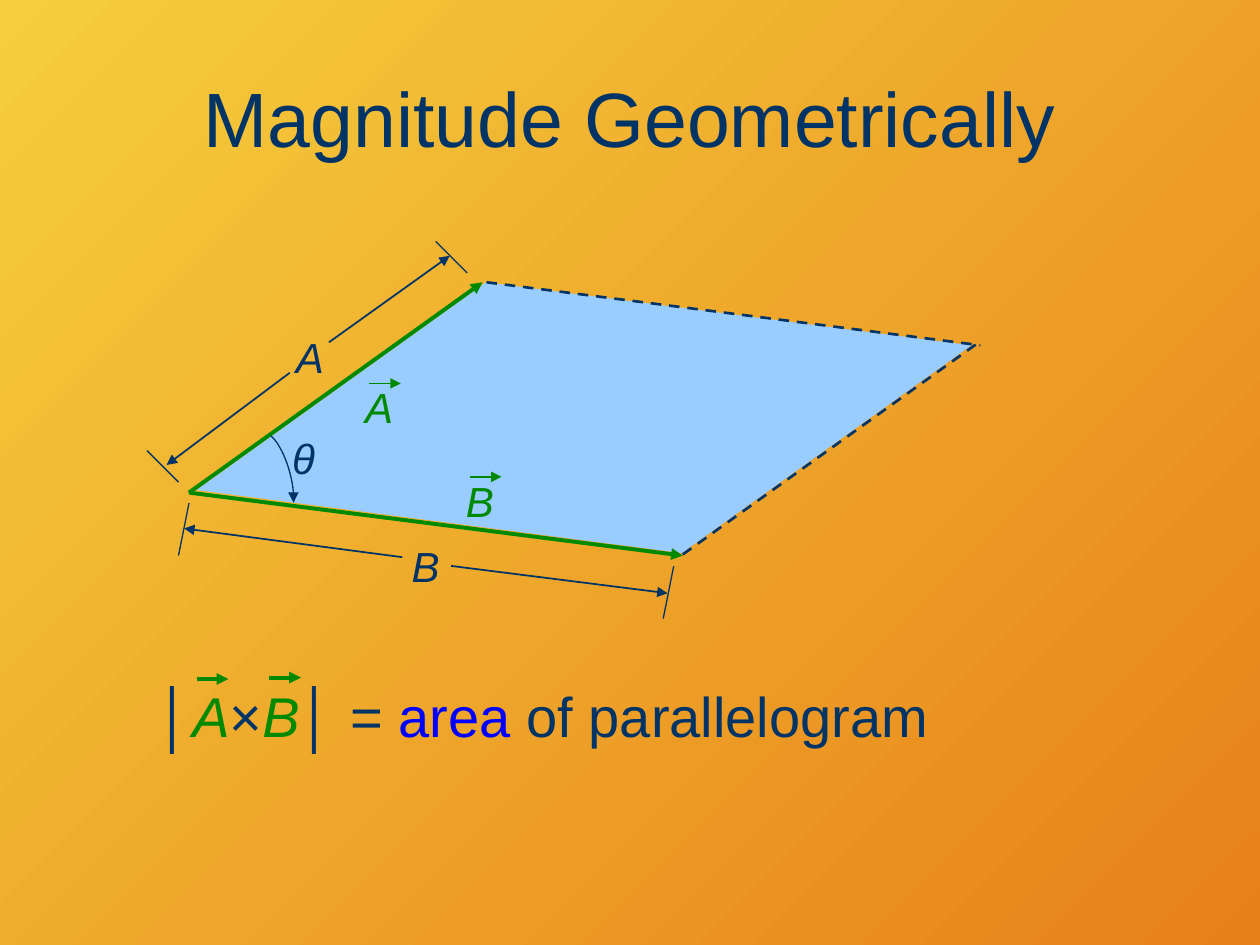
from dataclasses import dataclass

from lxml.etree import SubElement
from pptx import Presentation
from pptx.dml.color import RGBColor
from pptx.enum.dml import MSO_LINE
from pptx.enum.shapes import MSO_CONNECTOR, MSO_SHAPE
from pptx.enum.text import MSO_ANCHOR, PP_ALIGN
from pptx.oxml.ns import qn
from pptx.util import Pt


@dataclass(frozen=True)
class Theme:
    font: str = "Arial"
    navy: str = "003366"
    green: str = "008901"
    blue: str = "0000FF"
    area: str = "99CCFF"
    sky: tuple = ("F5CE3D", "E88018")
    title: int = 44
    body: int = 32
    label: int = 24
    hair: float = 0.75
    thin: float = 1
    dashed: float = 1.5
    bold: float = 2.25


THEME = Theme()


def rgb(value):
    return RGBColor.from_string(value)


def paint_background(slide):
    fill = slide.background.fill
    fill.gradient()
    fill.gradient_angle = 315
    for stop, color, position in zip(fill.gradient_stops, THEME.sky, (0, 1)):
        stop.color.rgb = rgb(color)
        stop.position = position


def add_arrowhead(line):
    SubElement(line._get_or_add_ln(), qn("a:tailEnd"), type="triangle")


def add_line(slide, start, end, color, width, arrow=False, dash=False):
    connector = slide.shapes.add_connector(
        MSO_CONNECTOR.STRAIGHT, *(Pt(v) for v in (*start, *end)))
    connector.line.color.rgb = rgb(color)
    connector.line.width = Pt(width)
    if dash:
        connector.line.dash_style = MSO_LINE.DASH
    if arrow:
        add_arrowhead(connector.line)
    SubElement(connector._element.spPr, qn("a:effectLst"))


def add_text(slide, box, runs, size, align=PP_ALIGN.LEFT,
             anchor=MSO_ANCHOR.TOP, wrap=True):
    """Write one paragraph; each run is (text, color, italic)."""
    frame = slide.shapes.add_textbox(*(Pt(v) for v in box)).text_frame
    frame.word_wrap = wrap
    frame.vertical_anchor = anchor
    paragraph = frame.paragraphs[0]
    paragraph.alignment = align
    for text, color, italic in runs:
        run = paragraph.add_run()
        run.text = text
        run.font.name = THEME.font
        run.font.size = Pt(size)
        run.font.italic = italic
        run.font.color.rgb = rgb(color)


def add_label(slide, letter, left, top, color):
    add_text(slide, (left, top, 30, 36), [(letter, color, True)], THEME.label,
             PP_ALIGN.CENTER, MSO_ANCHOR.MIDDLE, wrap=False)


def add_vector_mark(slide, left, y, width):
    """Draw the short arrow that stands above a vector's letter."""
    add_line(slide, (left, y), (left + 18, y), THEME.green, width, arrow=True)


def add_area(slide):
    area = slide.shapes.add_shape(
        MSO_SHAPE.PARALLELOGRAM, Pt(119.5), Pt(169.2), Pt(428.4), Pt(139))
    area.adjustments[0] = 1.07
    area.rotation = 7.4
    area.shadow.inherit = False
    area.fill.solid()
    area.fill.fore_color.rgb = rgb(THEME.area)
    area.line.fill.background()


def add_angle_arc(slide, controls, steps=16):
    """Trace a cubic Bezier curve with an arrowhead at its end."""
    def point(t):
        weights = ((1 - t) ** 3, 3 * t * (1 - t) ** 2, 3 * t * t * (1 - t), t ** 3)
        return tuple(Pt(sum(w * c for w, c in zip(weights, axis)))
                     for axis in zip(*controls))

    builder = slide.shapes.build_freeform(*point(0))
    builder.add_line_segments(
        [point(i / steps) for i in range(1, steps + 1)], close=False)
    arc = builder.convert_to_shape()
    arc.shadow.inherit = False
    arc.fill.background()
    arc.line.color.rgb = rgb(THEME.navy)
    arc.line.width = Pt(THEME.hair)
    add_arrowhead(arc.line)


def add_diagram(slide):
    origin = (108, 281.5)
    add_area(slide)
    for tip in ((275.8, 161.3), (390.2, 317.5)):
        add_line(slide, origin, tip, THEME.green, THEME.bold, arrow=True)

    for letter, left, top in (("A", 201.6, 214.6), ("B", 259.2, 268)):
        add_label(slide, letter, left, top, THEME.green)
        add_vector_mark(slide, left + 9.4, top + 4.5, THEME.thin)
    for letter, left, top in (("A", 162, 185.8), ("B", 228.2, 305.3),
                              ("θ", 158.4, 243.4)):
        add_label(slide, letter, left, top, THEME.navy)

    # Ticks that bound the two lengths
    for (x, y), (dx, dy) in (((108, 287.5), (-6, 30)), ((385, 323.5), (-6, 30)),
                             ((102, 275.5), (-18, -18)),
                             ((267, 156), (-18, -18))):
        add_line(slide, (x, y), (x + dx, y + dy), THEME.navy, THEME.hair)

    # Length arrows run outward from the letters
    for start, end in (((257.8, 323.4), (381.5, 339)),
                       ((165.6, 213), (95.2, 265.7)),
                       ((229.9, 318.4), (105.2, 302)),
                       ((188, 195.6), (257, 146.2))):
        add_line(slide, start, end, THEME.navy, THEME.thin, arrow=True)

    add_angle_arc(slide, ((154.8, 249.1), (161.3, 254.2),
                          (168.5, 272.9), (167.8, 287.3)))
    for start, end in (((390.2, 316.8), (558, 196.6)),
                       ((278, 161.3), (560.2, 197.3))):
        add_line(slide, start, end, THEME.navy, THEME.dashed, dash=True)


def add_formula(slide):
    for left, y in ((112.5, 388), (154, 387.2)):
        add_vector_mark(slide, left, y, THEME.bold)
    add_text(slide, (82.8, 386, 600, 54), [
        ("│", THEME.navy, False), ("A", THEME.green, True),
        ("×", THEME.navy, False), ("B", THEME.green, True),
        ("│ = ", THEME.navy, False), ("area", THEME.blue, False),
        (" of parallelogram", THEME.navy, False)], THEME.body)


def main():
    deck = Presentation()
    deck.slide_width, deck.slide_height = Pt(720), Pt(540)
    slide = deck.slides.add_slide(deck.slide_layouts[6])
    paint_background(slide)
    add_text(slide, (36, 21.6, 648, 90),
             [("Magnitude Geometrically", THEME.navy, False)], THEME.title,
             PP_ALIGN.CENTER, MSO_ANCHOR.MIDDLE)
    add_diagram(slide)
    add_formula(slide)
    deck.save("out.pptx")


if __name__ == "__main__":
    main()
